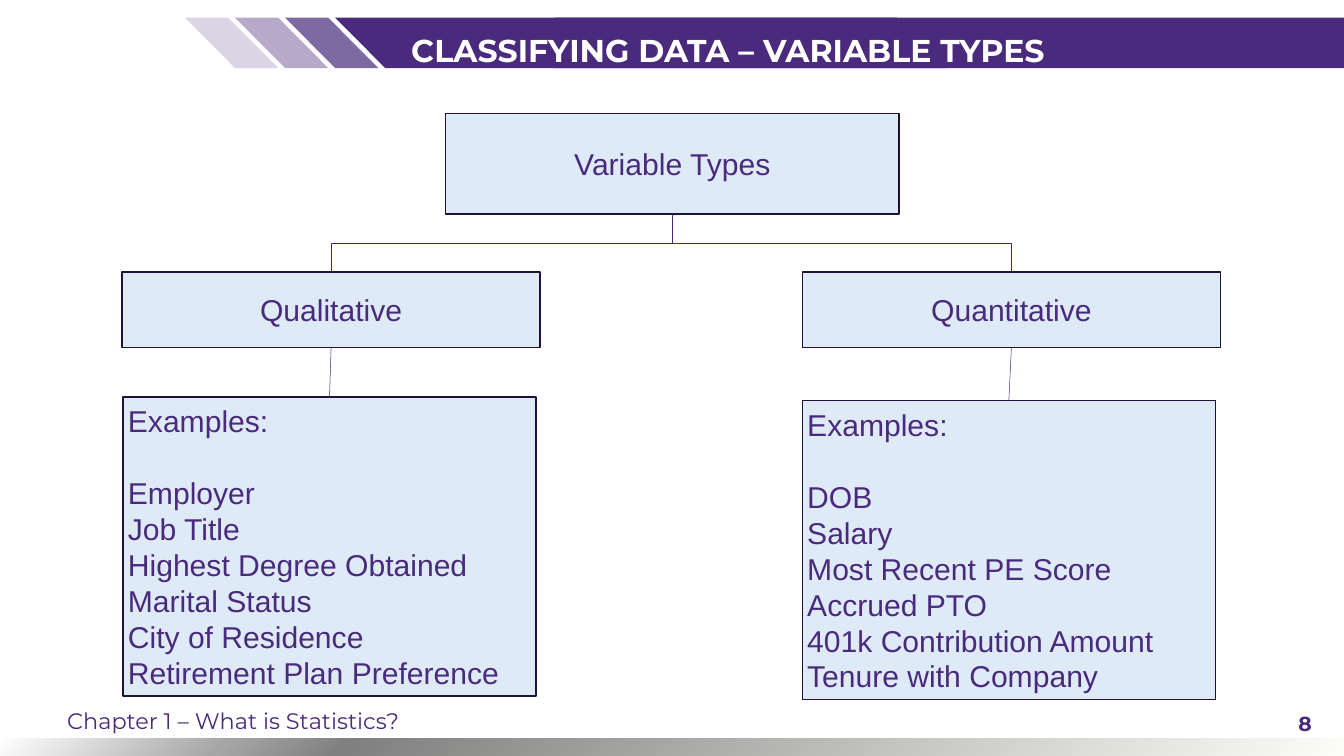
from lxml import etree
from pptx import Presentation
from pptx.dml.color import RGBColor
from pptx.enum.shapes import MSO_CONNECTOR, MSO_SHAPE
from pptx.enum.text import MSO_ANCHOR, PP_ALIGN
from pptx.oxml import parse_xml
from pptx.oxml.ns import nsdecls, qn
from pptx.util import Pt

RECT, SLANT = MSO_SHAPE.RECTANGLE, MSO_SHAPE.PARALLELOGRAM
LINE, ELBOW = MSO_CONNECTOR.STRAIGHT, MSO_CONNECTOR.ELBOW
TOP, MIDDLE = MSO_ANCHOR.TOP, MSO_ANCHOR.MIDDLE
LEFT, CENTER, RIGHT = PP_ALIGN.LEFT, PP_ALIGN.CENTER, PP_ALIGN.RIGHT
PURPLE, PALE, EDGE, LINK, WHITE = "4A2A7C", "DEEBF7", "201236", "48277B", "FFFFFF"
PITCH = 51.4
ROOT_X = 960.48
ROOT_END = 306
GROUPS = [
    ("Qualitative", 174.24, 175.68, 567.36,
     ["Employer", "Job Title", "Highest Degree Obtained", "Marital Status",
      "City of Residence", "Retirement Plan Preference"]),
    ("Quantitative", 1146.24, 1146.24, 572.4,
     ["DOB", "Salary", "Most Recent PE Score", "Accrued PTO",
      "401k Contribution Amount", "Tenure with Company"]),
]


def paint(fmt, color):
    """Set a solid colour on a fill."""
    fmt.solid()
    fmt.fore_color.rgb = RGBColor.from_string(color)


def block(slide, kind, x, y, w, h, color):
    """Add a filled shape with no outline."""
    shape = slide.shapes.add_shape(kind, Pt(x), Pt(y), Pt(w), Pt(h))
    shape.shadow.inherit = False
    paint(shape.fill, color)
    shape.line.fill.background()
    return shape


def band(slide, x, w, alpha):
    """Add a slanted header stripe with an opacity in percent."""
    shape = block(slide, SLANT, x, 25.2, w, 72, PURPLE)
    shape.adjustments[0] = 0.993
    shape.rotation = 180
    shape.element.spPr.find(qn("a:xfrm")).set("flipH", "1")
    if alpha < 100:
        color = shape.element.spPr.find(qn("a:solidFill"))[0]
        etree.SubElement(color, qn("a:alpha")).set("val", str(alpha * 1000))


def footer(slide):
    """Add the strip with a radial gradient along the slide bottom."""
    shape = block(slide, RECT, -2, 1054.8, 1920, 25.2, WHITE)
    stops = [(0, "FCFDF6"), (74, "808080"), (83, "A6A6A6"), (100, WHITE)]
    marks = "".join(
        f'<a:gs pos="{pos * 1000}"><a:srgbClr val="{color}"/></a:gs>'
        for pos, color in stops)
    grad = parse_xml(
        f'<a:gradFill {nsdecls("a")} rotWithShape="1"><a:gsLst>{marks}</a:gsLst>'
        '<a:path path="circle"><a:fillToRect l="100000" t="100000"/></a:path>'
        '</a:gradFill>')
    props = shape.element.spPr
    props.replace(props.find(qn("a:solidFill")), grad)


def write(para, text, size, font, color=PURPLE, bold=False):
    """Add one styled run to a paragraph."""
    run = para.add_run()
    run.text = text
    run.font.size = Pt(size)
    run.font.name = font
    run.font.bold = bold
    run.font.color.rgb = RGBColor.from_string(color)


def label(slide, x, y, w, h, text, size, align=LEFT, anchor=MIDDLE,
          color=PURPLE, bold=False):
    """Add a one-line text box."""
    frame = slide.shapes.add_textbox(Pt(x), Pt(y), Pt(w), Pt(h)).text_frame
    frame.word_wrap = True
    frame.vertical_anchor = anchor
    frame.margin_left = frame.margin_right = Pt(17.28)
    frame.margin_top = frame.margin_bottom = Pt(8.64)
    para = frame.paragraphs[0]
    para.alignment = align
    write(para, text, size, "Montserrat", color, bold)


def node(slide, x, y, w, h, lines, align=CENTER):
    """Add an outlined box, with a gap after the first of several lines."""
    shape = block(slide, RECT, x, y, w, h, PALE)
    paint(shape.line.fill, EDGE)
    shape.line.width = Pt(2)
    frame = shape.text_frame
    frame.word_wrap = True
    frame.vertical_anchor = MIDDLE
    for i, text in enumerate(lines):
        para = frame.add_paragraph() if i else frame.paragraphs[0]
        para.alignment = align
        if len(lines) > 1:
            para.line_spacing = Pt(PITCH)
        if i == 1:
            para.space_before = Pt(PITCH)
        write(para, text, 43, "Arial")


def link(slide, kind, x1, y1, x2, y2):
    """Add a thin connector."""
    line = slide.shapes.add_connector(kind, Pt(x1), Pt(y1), Pt(x2), Pt(y2))
    paint(line.line.fill, LINK)
    line.line.width = Pt(0.75)
    etree.SubElement(line.element.spPr, qn("a:effectLst"))
    return line


def branch(slide, x1, y1, x2, y2):
    """Add an elbow that leaves downwards, by turning a sideways one."""
    side = 1 if x2 > x1 else -1
    mid_x, mid_y = (x1 + x2) / 2, (y1 + y2) / 2
    run, drop = abs(x2 - x1) / 2, (y2 - y1) / 2
    line = link(slide, ELBOW, mid_x + side * drop, mid_y - run,
                mid_x - side * drop, mid_y + run)
    turn = 270 if side > 0 else 90
    line.element.spPr.find(qn("a:xfrm")).set("rot", str(turn * 60000))


def group(slide, name, x, list_x, list_y, items):
    """Add a variable type, its examples and their links."""
    mid = x + 298.8
    node(slide, x, 388.8, 597.6, 108, [name])
    node(slide, list_x, list_y, 590.4, 426.96, ["Examples:"] + items, LEFT)
    branch(slide, ROOT_X, ROOT_END, mid, 388.8)
    link(slide, LINE, mid, 496.8, list_x + 295.2, list_y)


def main():
    """Build and save the slide."""
    deck = Presentation()
    deck.slide_width, deck.slide_height = Pt(1920.24), Pt(1080)
    slide = deck.slides.add_slide(deck.slide_layouts[6])
    footer(slide)
    band(slide, 478.8, 874, 100)
    for i, alpha in enumerate((20, 40, 70)):
        band(slide, 264.24 + 71.5 * i, 133.2, alpha)
    block(slide, RECT, 792, 25.2, 1128.24, 72, PURPLE)
    label(slide, 570.24, 36, 1290.24, 68.4, "CLASSIFYING DATA – VARIABLE TYPES",
          45, anchor=TOP, color=WHITE, bold=True)
    node(slide, ROOT_X - 324, 162, 648, 144, ["Variable Types"])
    for entry in GROUPS:
        group(slide, *entry)
    label(slide, 78.48, 1000.8, 1416.24, 57.6, "Chapter 1 – What is Statistics?", 32)
    label(slide, 1521.36, 1004.4, 370.08, 57.6, "8", 29, align=RIGHT, bold=True)
    deck.save("out.pptx")


if __name__ == "__main__":
    main()
